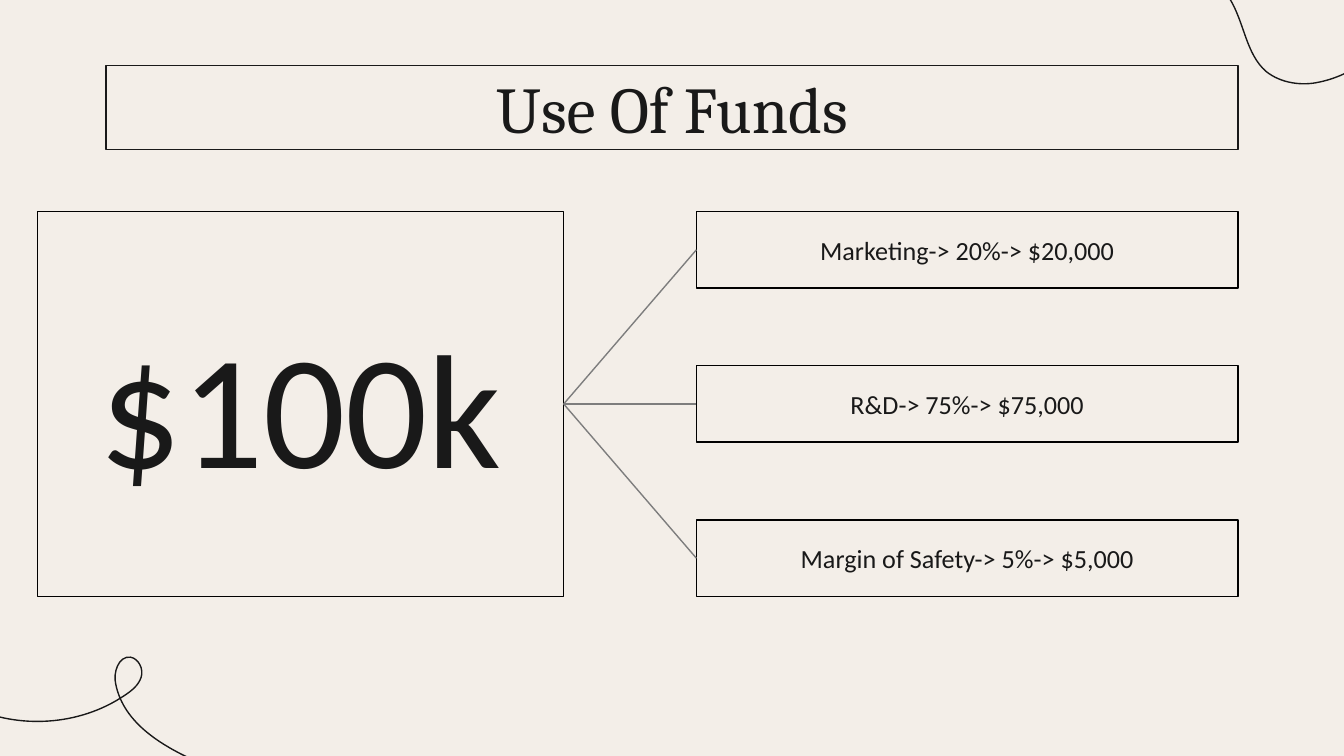
from math import cos, radians, sin

from lxml.etree import SubElement
from pptx import Presentation
from pptx.dml.color import RGBColor
from pptx.enum.shapes import MSO_CONNECTOR, MSO_SHAPE
from pptx.enum.text import MSO_ANCHOR, PP_ALIGN
from pptx.oxml.ns import qn
from pptx.util import Pt

COLORS = {"paper": "F3EEE8", "ink": "191919", "border": "000000", "link": "7D7D7D"}
LINE_WIDTH = 0.75
INSET = 7.2

FUNDS = [
    "Marketing-> 20%-> $20,000",
    "R&D-> 75%-> $75,000",
    "Margin of Safety-> 5%-> $5,000",
]

# Bezier points relative to the start of each curve, three per segment
TOP_CURVE = [
    (0, 0),
    (0, 1.4), (4.3, 2.9), (5.8, 2.9),
    (15.8, 1.4), (26.6, 2.2), (36.7, 5.8),
    (46.8, 10.1), (55.4, 16.6), (61.2, 25.2),
    (69.1, 38.2), (69.8, 54.7), (80.6, 64.1),
    (88.6, 70.6), (100.1, 72), (109.4, 69.8),
    (119.5, 67.7), (128.9, 62.6), (136.8, 56.9),
]
BOTTOM_CURVE = [
    (0, 0),
    (25.9, 12.2), (58.3, 10.1), (82.1, -5.8),
    (86.4, -8.6), (90, -11.5), (91.4, -15.8),
    (92.9, -20.2), (90, -25.9), (85.7, -26.6),
    (79.2, -27.4), (76.3, -18), (77.8, -12.2),
    (82.1, 9.4), (103.7, 21.6), (123.1, 30.2),
    (167, 51.1), (213.1, 67.7), (259.9, 81.4),
]


def rgb(name):
    return RGBColor.from_string(COLORS[name])


def set_line(shape, color):
    shape.line.color.rgb = rgb(color)
    shape.line.width = Pt(LINE_WIDTH)


def turn(point, degrees):
    """Turn a point clockwise on the page around the origin."""
    x, y = point
    angle = radians(degrees)
    return x * cos(angle) - y * sin(angle), x * sin(angle) + y * cos(angle)


def add_curve(page, left, top, points, rotation):
    """Draw a rotated open stroke from its Bezier points."""
    flat = [turn((Pt(left + x), Pt(top + y)), -rotation) for x, y in points]
    builder = page.shapes.build_freeform(*(round(value) for value in flat[0]), scale=1.0)
    builder.add_line_segments(flat[1:], close=False)
    stroke = builder.convert_to_shape()

    # Merge each three line steps into one cubic segment
    steps = list(stroke._element.iter(qn("a:lnTo")))
    outline = steps[0].getparent()
    for i in range(0, len(steps), 3):
        segment = SubElement(outline, qn("a:cubicBezTo"))
        for step in steps[i:i + 3]:
            segment.append(step[0])
            outline.remove(step)

    # Turn the stroke back around the page origin
    center = (stroke.left + stroke.width / 2, stroke.top + stroke.height / 2)
    x, y = turn(center, rotation)
    stroke.left, stroke.top = round(x - stroke.width / 2), round(y - stroke.height / 2)
    stroke.rotation = rotation
    stroke.shadow.inherit = False
    stroke.fill.background()
    set_line(stroke, "ink")


def add_frame(page, box, text, size, font="Calibri", border="border"):
    """Draw an outlined rectangle with centred text."""
    frame = page.shapes.add_shape(MSO_SHAPE.RECTANGLE, *(Pt(value) for value in box))
    frame.shadow.inherit = False
    frame.fill.background()
    set_line(frame, border)
    body = frame.text_frame
    layout = {"word_wrap": True, "vertical_anchor": MSO_ANCHOR.MIDDLE}
    layout.update({f"margin_{side}": Pt(INSET) for side in ("left", "top", "right", "bottom")})
    for key, value in layout.items():
        setattr(body, key, value)
    para = body.paragraphs[0]
    para.alignment = PP_ALIGN.CENTER
    span = para.add_run()
    span.text = text
    for key, value in {"name": font, "size": Pt(size)}.items():
        setattr(span.font, key, value)
    span.font.color.rgb = rgb("ink")
    return frame


def add_link(page, source, target):
    """Join the right side of one frame to the left side of another."""
    link = page.shapes.add_connector(MSO_CONNECTOR.STRAIGHT, 0, 0, 0, 0)
    link.begin_connect(source, 3)
    link.end_connect(target, 1)
    set_line(link, "link")
    SubElement(link._element.spPr, qn("a:effectLst"))


def add_breakdown(page, box):
    """Place the total on the left and its shares on the right."""
    left, top, width, height = box
    total_width, share_width, share_height = 281.8, 290.2, 41
    total = add_frame(page, (left, top, total_width, height), "$100k", 87)
    pitch = (height - share_height) / (len(FUNDS) - 1)
    shares = [
        add_frame(
            page,
            (left + width - share_width, top + row * pitch, share_width, share_height),
            text, 14,
        )
        for row, text in enumerate(FUNDS)
    ]
    for share in shares:
        add_link(page, total, share)


def main():
    deck = Presentation()
    deck.slide_width, deck.slide_height = Pt(720), Pt(405)
    page = deck.slides.add_slide(deck.slide_layouts[6])
    page.background.fill.solid()
    page.background.fill.fore_color.rgb = rgb("paper")

    # Corner strokes
    add_curve(page, 597.6, -25.9, TOP_CURVE, 206.9)
    add_curve(page, -15.8, 378.7, BOTTOM_CURVE, 26.5)

    # Title and breakdown
    add_frame(page, (56.9, 35.2, 606.4, 45), "Use Of Funds", 35, "Cambria", "ink")
    add_breakdown(page, (20.2, 113.3, 643.1, 206.3))

    deck.save("out.pptx")


if __name__ == "__main__":
    main()
